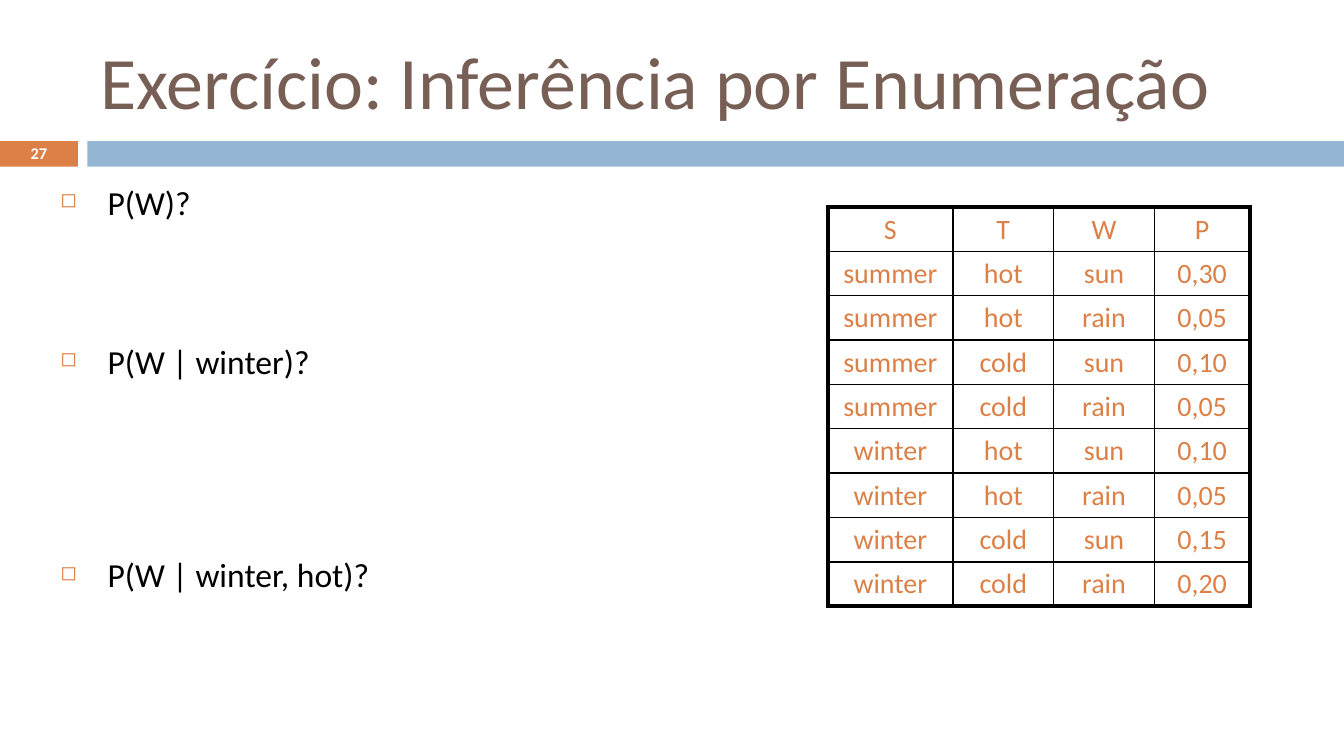
"""Build the slide with the exercise on inference by enumeration."""
from typing import NamedTuple

from lxml import etree
from pptx import Presentation
from pptx.dml.color import RGBColor
from pptx.enum.shapes import MSO_SHAPE
from pptx.enum.text import MSO_ANCHOR, PP_ALIGN
from pptx.oxml.ns import qn
from pptx.util import Inches, Pt

RECTANGLE = MSO_SHAPE.RECTANGLE
MIDDLE = MSO_ANCHOR.MIDDLE
TOP = MSO_ANCHOR.TOP
CENTER = PP_ALIGN.CENTER
LEFT = PP_ALIGN.LEFT
FONT = "Calibri"
ORANGE, BLUE, BROWN = "DD8047", "94B6D2", "775F55"
BLACK, WHITE = "000000", "FFFFFF"
THIN, THICK = 1, 2.25
COLUMN_WIDTHS = (0.93, 0.75, 0.75, 0.71)
ROW_HEIGHT = 0.33
ROWS = (
    ("S", "T", "W", "P"),
    ("summer", "hot", "sun", "0,30"),
    ("summer", "hot", "rain", "0,05"),
    ("summer", "cold", "sun", "0,10"),
    ("summer", "cold", "rain", "0,05"),
    ("winter", "hot", "sun", "0,10"),
    ("winter", "hot", "rain", "0,05"),
    ("winter", "cold", "sun", "0,15"),
    ("winter", "cold", "rain", "0,20"),
)


class Area(NamedTuple):
    left: float
    top: float
    width: float
    height: float

    def lengths(self):
        return [Inches(value) for value in self]


class Style(NamedTuple):
    size: float
    color: str
    bold: bool = False
    align: PP_ALIGN = LEFT


class Question(NamedTuple):
    text: str
    space_before: float


QUESTIONS = (
    Question("P(W)?", 7),
    Question("P(W | winter)?", 63.9),
    Question("P(W | winter, hot)?", 92.6),
)
QUESTION_STYLE = Style(18, BLACK)
CELL_STYLE = Style(15, ORANGE, align=CENTER)


def rgb(color: str) -> RGBColor:
    return RGBColor.from_string(color)


def write(paragraph, text: str, style: Style) -> None:
    paragraph.text = text
    paragraph.alignment = style.align
    font = paragraph.font
    font.name, font.size, font.bold = FONT, Pt(style.size), style.bold
    font.color.rgb = rgb(style.color)


def add_bar(slide, area: Area, color: str) -> None:
    bar = slide.shapes.add_shape(RECTANGLE, *area.lengths())
    bar.shadow.inherit = False
    bar.fill.solid()
    bar.fill.fore_color.rgb = rgb(color)
    bar.line.fill.background()


def add_frame(slide, area: Area, anchor: MSO_ANCHOR):
    frame = slide.shapes.add_textbox(*area.lengths()).text_frame
    frame.word_wrap = True
    frame.vertical_anchor = anchor
    frame.margin_left = frame.margin_right = Inches(0.07)
    frame.margin_top = frame.margin_bottom = Inches(0.04)
    return frame


def add_label(slide, area: Area, text: str, style: Style) -> None:
    write(add_frame(slide, area, MIDDLE).paragraphs[0], text, style)


def add_bullet(paragraph) -> None:
    properties = paragraph._p.get_or_add_pPr()
    properties.set("marL", str(Inches(0.35)))
    properties.set("indent", str(Inches(-0.35)))
    bullet = (
        etree.Element(qn("a:buClr")),
        etree.Element(qn("a:buSzPct"), val="60000"),
        etree.Element(qn("a:buChar"), char="◻"),
    )
    etree.SubElement(bullet[0], qn("a:srgbClr"), val=ORANGE)
    defaults = properties.find(qn("a:defRPr"))
    for element in bullet:
        defaults.addprevious(element)


def add_questions(slide, area: Area) -> None:
    frame = add_frame(slide, area, TOP)
    for index, question in enumerate(QUESTIONS):
        paragraph = frame.add_paragraph() if index else frame.paragraphs[0]
        write(paragraph, question.text, QUESTION_STYLE)
        paragraph.space_before = Pt(question.space_before)
        add_bullet(paragraph)


def set_border(cell, side: str, width: float) -> None:
    properties = cell._tc.get_or_add_tcPr()
    line = etree.SubElement(properties, qn(f"a:ln{side}"), w=str(Pt(width)))
    fill = etree.SubElement(line, qn("a:solidFill"))
    etree.SubElement(fill, qn("a:srgbClr"), val=BLACK)


def add_probabilities(slide, left: float, top: float) -> None:
    area = Area(left, top, sum(COLUMN_WIDTHS), ROW_HEIGHT * len(ROWS))
    last_row, last_column = len(ROWS) - 1, len(COLUMN_WIDTHS) - 1
    table = slide.shapes.add_table(len(ROWS), len(COLUMN_WIDTHS), *area.lengths()).table
    table.first_row = table.horz_banding = False
    for column, width in zip(table.columns, COLUMN_WIDTHS):
        column.width = Inches(width)
    for row, values in enumerate(ROWS):
        table.rows[row].height = Inches(ROW_HEIGHT)
        for column, value in enumerate(values):
            cell = table.cell(row, column)
            cell.margin_left = cell.margin_right = Inches(0.07)
            cell.margin_top, cell.margin_bottom = Inches(0.04), Inches(0.03)
            write(cell.text_frame.paragraphs[0], value, CELL_STYLE)
            outer_sides = {"L": column == 0, "R": column == last_column,
                           "T": row == 0, "B": row == last_row}
            for side, is_outer in outer_sides.items():
                set_border(cell, side, THICK if is_outer else THIN)
            cell.fill.background()


def main() -> None:
    deck = Presentation()
    deck.slide_width = Inches(10)
    deck.slide_height = deck.slide_width * 9 // 16
    slide = deck.slides.add_slide(deck.slide_layouts[6])
    add_bar(slide, Area(0, 1.05, 0.58, 0.19), ORANGE)
    add_bar(slide, Area(0.65, 1.05, 9.35, 0.19), BLUE)
    add_label(slide, Area(0.68, 0.19, 8.92, 0.81),
              "Exercício: Inferência por Enumeração", Style(39.6, BROWN))
    add_questions(slide, Area(0.38, 1.31, 3.31, 3.71))
    add_probabilities(slide, 6.16, 1.54)
    add_label(slide, Area(0, 1.04, 0.58, 0.2), "27", Style(8.8, WHITE, True, CENTER))
    deck.save("out.pptx")


if __name__ == "__main__":
    main()
